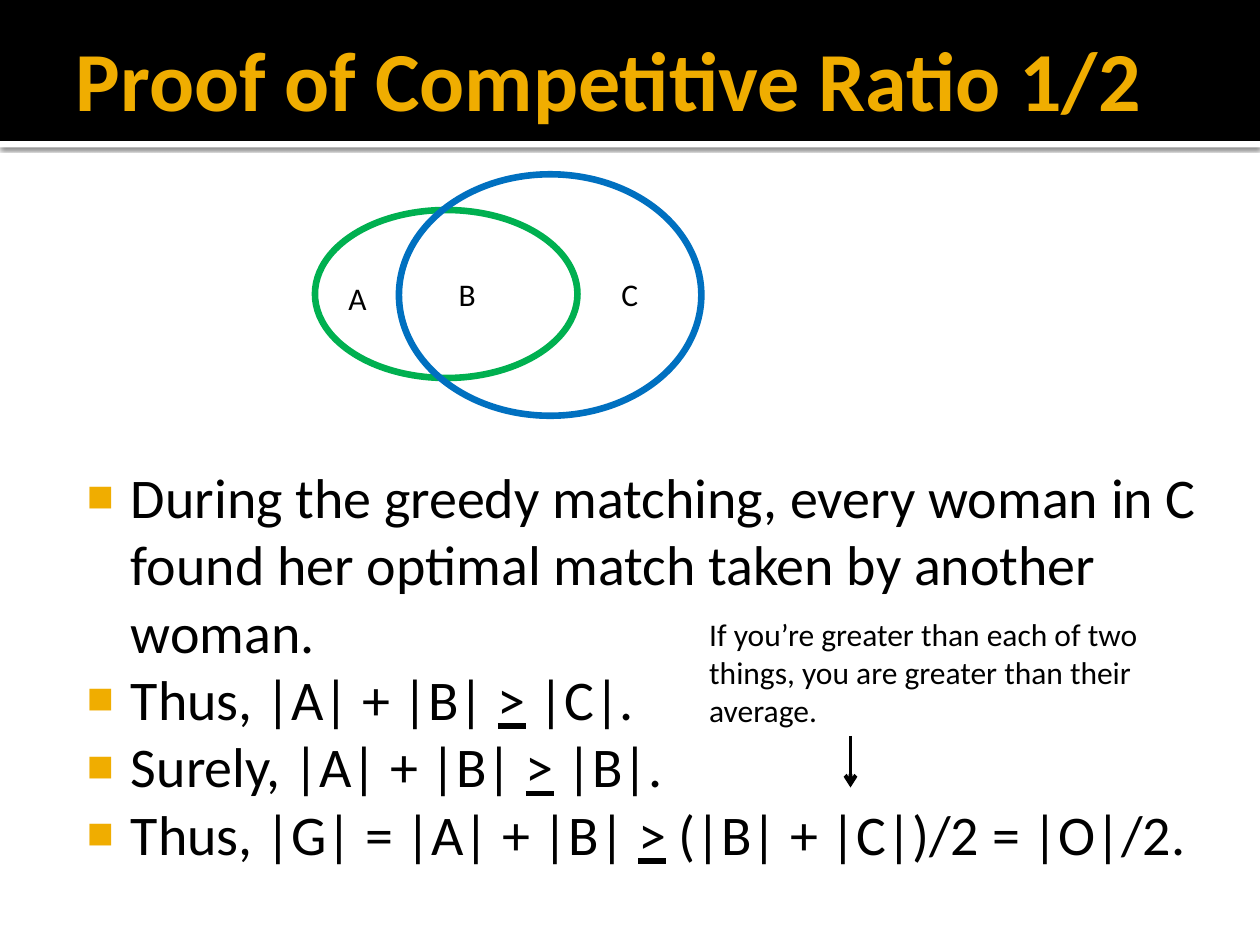
from lxml.etree import SubElement
from pptx import Presentation
from pptx.dml.color import RGBColor
from pptx.enum.shapes import MSO_CONNECTOR, MSO_SHAPE
from pptx.enum.text import MSO_ANCHOR, MSO_AUTO_SIZE, PP_ALIGN
from pptx.oxml.ns import qn
from pptx.util import Pt

# Content
COLORS = {"black": "000000", "white": "FFFFFF", "gold": "F0AD00",
          "green": "00B050", "blue": "0070C0"}
FONT = "Calibri"
TITLE = "Proof of Competitive Ratio 1/2"
STEPS = [
    "During the greedy matching, every woman in C found her optimal match taken by another woman.",
    "Thus, |A| + |B| > |C|.",
    "Surely, |A| + |B| > |B|.",
    "Thus, |G| = |A| + |B| > (|B| + |C|)/2 = |O|/2.",
]
NOTE = ["If you’re greater than each of two",
        "things, you are greater than their",
        "average."]
# left, top, width, height in points
BANDS = [("white", (0, 80.6, 720, 3.6)), ("black", (0, 0, 720, 80.6))]
SETS = [("green", (180, 120, 150, 96)), ("blue", (228, 99.6, 172.8, 138))]
SET_LABELS = [("A", (192, 156, 26, 29)), ("B", (255, 153.6, 25, 29)),
              ("C", (348, 153.6, 25, 29))]
NOTE_AREA = (398.2, 348, 263.5, 72.7)
ARROW = (486, 420.5, 486, 450)


def color(name):
    return RGBColor.from_string(COLORS[name])


def points(values):
    return [Pt(value) for value in values]


def write(shape, lines, size=18, ink="black", bold=False, wrap=True,
          grow=False, anchor=MSO_ANCHOR.TOP, insets=(7.2, 3.6, 7.2, 3.6),
          pitch=None):
    """Write one paragraph per line, underlining each '>' as 'at least'."""
    frame = shape.text_frame
    frame.word_wrap = wrap
    frame.auto_size = MSO_AUTO_SIZE.SHAPE_TO_FIT_TEXT if grow else MSO_AUTO_SIZE.NONE
    frame.vertical_anchor = anchor
    (frame.margin_left, frame.margin_top,
     frame.margin_right, frame.margin_bottom) = points(insets)
    for index, line in enumerate(lines):
        para = frame.paragraphs[0] if index == 0 else frame.add_paragraph()
        para.alignment = PP_ALIGN.LEFT
        para.space_before = para.space_after = Pt(0)
        if pitch:
            para.line_spacing = Pt(pitch)
        before, sign, after = line.partition(">")
        for text in filter(None, (before, sign, after)):
            span = para.add_run()
            span.text = text
            font = span.font
            font.name, font.size, font.bold = FONT, Pt(size), bold
            font.color.rgb = color(ink)
            if text == ">":
                font.underline = True


def add_bullet(para):
    properties = para._p.get_or_add_pPr()
    properties.set("marL", str(Pt(34.5)))
    properties.set("indent", str(-Pt(25.2)))
    tint = SubElement(properties, qn("a:buClr"))
    SubElement(tint, qn("a:srgbClr"), val=COLORS["gold"])
    SubElement(properties, qn("a:buSzPct"), val="80000")
    SubElement(properties, qn("a:buFont"), typeface="Arial")
    SubElement(properties, qn("a:buChar"), char="■")


def add_plain_shape(page, kind, area, fill=None, line=None):
    shape = page.shapes.add_shape(kind, *points(area))
    shape.shadow.inherit = False
    if fill:
        shape.fill.solid()
        shape.fill.fore_color.rgb = color(fill)
    else:
        shape.fill.background()
    if line:
        shape.line.color.rgb = color(line)
        shape.line.width = Pt(3.78)
    else:
        shape.line.fill.background()
    return shape


def add_drop_shadow(shape):
    effects = shape.element.spPr.find(qn("a:effectLst"))
    shadow = SubElement(effects, qn("a:outerShdw"), blurRad=str(Pt(2.5)),
                        dist=str(Pt(0.8)), dir="5400000", rotWithShape="0")
    tint = SubElement(shadow, qn("a:srgbClr"), val=COLORS["black"])
    SubElement(tint, qn("a:alpha"), val="60000")


def place(holder, area):
    """Position a placeholder and bring it in front of what is drawn so far."""
    holder.left, holder.top, holder.width, holder.height = points(area)
    holder.element.getparent().append(holder.element)


def main():
    deck = Presentation()
    deck.slide_width, deck.slide_height = Pt(720), Pt(540)
    page = deck.slides.add_slide(deck.slide_layouts[1])
    title, body = page.placeholders

    # Header band with a shadowed strip below
    strip, _ = [add_plain_shape(page, MSO_SHAPE.RECTANGLE, area, fill=fill)
                for fill, area in BANDS]
    add_drop_shadow(strip)

    # Title
    place(title, (36, 5.8, 684, 77.8))
    write(title, [TITLE], size=48, ink="gold", bold=True,
          anchor=MSO_ANCHOR.MIDDLE, insets=(7.2, 3.6, 3.6, 3.6))

    # Proof steps, with a deep top inset that leaves room for the diagram
    place(body, (36, 102.2, 671.8, 414))
    write(body, STEPS, size=32, insets=(4.3, 162, 7.2, 3.6), pitch=38.5)
    for para in body.text_frame.paragraphs:
        add_bullet(para)

    # Overlapping sets
    for line, area in SETS:
        add_plain_shape(page, MSO_SHAPE.OVAL, area, line=line)
    for label, area in SET_LABELS:
        write(page.shapes.add_textbox(*points(area)), [label], wrap=False, grow=True)

    # Side note with its arrow
    group = page.shapes.add_group_shape()
    note = group.shapes.add_textbox(*points(NOTE_AREA))
    write(note, NOTE, wrap=False, grow=True)
    arrow = group.shapes.add_connector(MSO_CONNECTOR.STRAIGHT, *points(ARROW))
    arrow.line.color.rgb = color("black")
    arrow.line.width = Pt(2.25)
    SubElement(arrow.line._get_or_add_ln(), qn("a:tailEnd"), type="arrow")
    SubElement(arrow.element.spPr, qn("a:effectLst"))

    deck.save("out.pptx")


if __name__ == "__main__":
    main()
